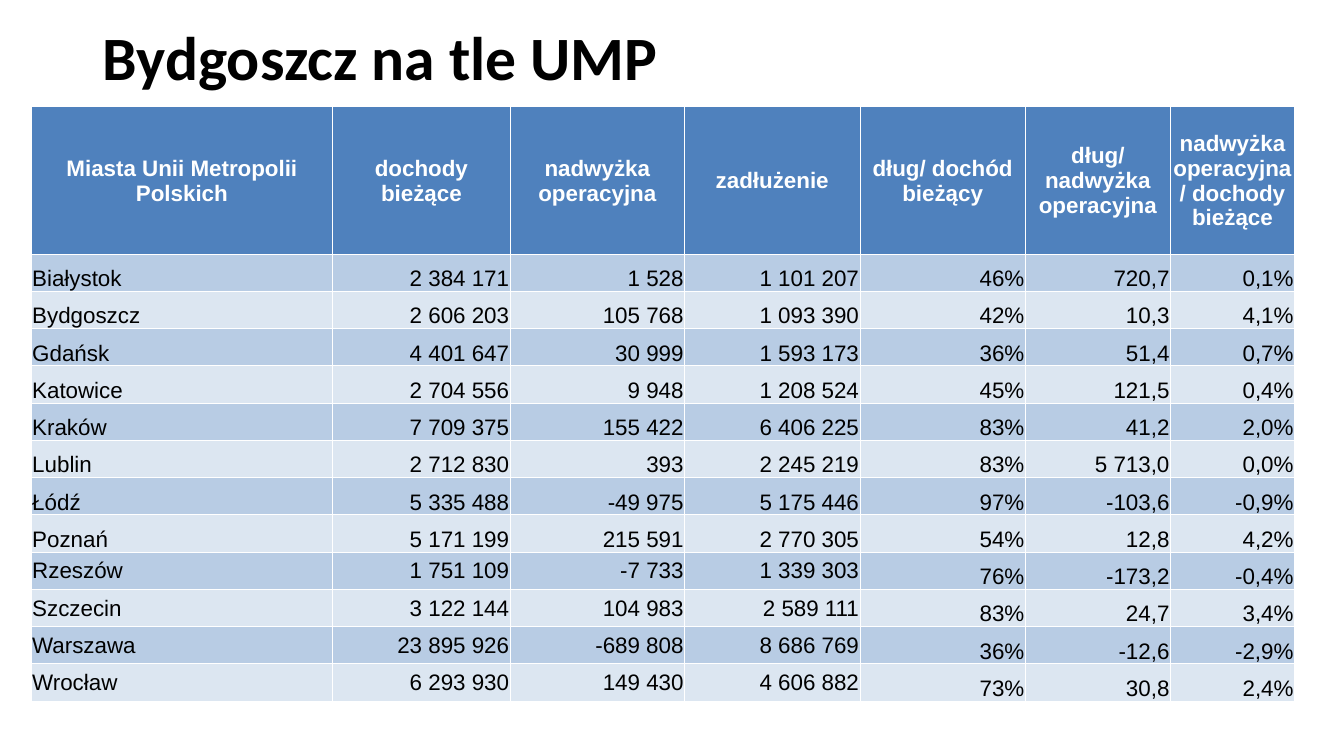
from dataclasses import dataclass

from lxml import etree
from pptx import Presentation
from pptx.dml.color import RGBColor
from pptx.enum.text import MSO_ANCHOR, PP_ALIGN
from pptx.oxml.ns import qn
from pptx.util import Inches, Pt

LEFT, CENTER, RIGHT = PP_ALIGN.LEFT, PP_ALIGN.CENTER, PP_ALIGN.RIGHT
MIDDLE, BOTTOM = MSO_ANCHOR.MIDDLE, MSO_ANCHOR.BOTTOM

TITLE = "Bydgoszcz na tle UMP"
HEADERS = [
    "Miasta Unii Metropolii Polskich",
    "dochody bieżące",
    "nadwyżka operacyjna",
    "zadłużenie",
    "dług/ dochód bieżący",
    "dług/ nadwyżka operacyjna",
    "nadwyżka operacyjna/ dochody bieżące",
]
CITIES = [
    ("Białystok", "2 384 171", "1 528", "1 101 207", "46%", "720,7", "0,1%"),
    ("Bydgoszcz", "2 606 203", "105 768", "1 093 390", "42%", "10,3", "4,1%"),
    ("Gdańsk", "4 401 647", "30 999", "1 593 173", "36%", "51,4", "0,7%"),
    ("Katowice", "2 704 556", "9 948", "1 208 524", "45%", "121,5", "0,4%"),
    ("Kraków", "7 709 375", "155 422", "6 406 225", "83%", "41,2", "2,0%"),
    ("Lublin", "2 712 830", "393", "2 245 219", "83%", "5 713,0", "0,0%"),
    ("Łódź", "5 335 488", "-49 975", "5 175 446", "97%", "-103,6", "-0,9%"),
    ("Poznań", "5 171 199", "215 591", "2 770 305", "54%", "12,8", "4,2%"),
    ("Rzeszów", "1 751 109", "-7 733", "1 339 303", "76%", "-173,2", "-0,4%"),
    ("Szczecin", "3 122 144", "104 983", "2 589 111", "83%", "24,7", "3,4%"),
    ("Warszawa", "23 895 926", "-689 808", "8 686 769", "36%", "-12,6", "-2,9%"),
    ("Wrocław", "6 293 930", "149 430", "4 606 882", "73%", "30,8", "2,4%"),
]
COLUMN_WIDTHS = [2.99, 1.76, 1.73, 1.74, 1.64, 1.44, 1.23]
HEADER_HEIGHT, CITY_HEIGHT = 1.46, 0.37
FIRST_CENTERED_ROW = 9  # from Rzeszów on, names and amounts sit mid-cell
AMOUNT_COLUMNS = 4


@dataclass(frozen=True)
class Theme:
    title_font: str = "Calibri"
    table_font: str = "Arial"
    title_size: int = 44
    table_size: int = 16
    border_width: float = 0.75
    dark: str = "000000"
    light: str = "FFFFFF"
    header_fill: str = "4F81BD"
    band_fills: tuple = ("B8CCE4", "DCE6F1")


THEME = Theme()


def style_font(font, name, size, color, bold):
    font.name = name
    font.size = Pt(size)
    font.bold = bold
    font.color.rgb = RGBColor.from_string(color)


def add_borders(cell, sides):
    """Draw the given sides, listed in schema order L, R, T, B."""
    properties = cell._tc.get_or_add_tcPr()
    for index, side in enumerate(sides):
        line = etree.Element(qn(f"a:ln{side}"), w=str(Pt(THEME.border_width)))
        fill = etree.SubElement(line, qn("a:solidFill"))
        etree.SubElement(fill, qn("a:srgbClr"), val=THEME.light)
        properties.insert(index, line)


def add_title(slide):
    title = slide.shapes.title
    title.left, title.top = Inches(0.92), Inches(0.15)
    title.width, title.height = Inches(11.5), Inches(0.9)
    text_frame = title.text_frame
    text_frame.text = TITLE
    text_frame.vertical_anchor = MIDDLE
    paragraph = text_frame.paragraphs[0]
    paragraph.alignment = LEFT
    paragraph.line_spacing = 0.9
    style_font(paragraph.runs[0].font, THEME.title_font, THEME.title_size,
               THEME.dark, True)


def fill_cell(cell, text, row, column):
    is_header = row == 0
    if is_header:
        fill, color, alignment = THEME.header_fill, THEME.light, CENTER
    else:
        fill, color = THEME.band_fills[(row - 1) % 2], THEME.dark
        alignment = LEFT if column == 0 else RIGHT
    is_centered = row >= FIRST_CENTERED_ROW and column < AMOUNT_COLUMNS
    cell.text = text
    cell.vertical_anchor = MIDDLE if is_header or is_centered else BOTTOM
    cell.margin_left = cell.margin_right = cell.margin_top = Inches(0.01)
    cell.margin_bottom = 0
    cell.fill.solid()
    cell.fill.fore_color.rgb = RGBColor.from_string(fill)
    paragraph = cell.text_frame.paragraphs[0]
    paragraph.alignment = alignment
    style_font(paragraph.runs[0].font, THEME.table_font, THEME.table_size,
               color, is_header)
    inner_sides = {
        "L": column > 0,
        "R": column < len(HEADERS) - 1,
        "T": row > 0,
        "B": row < len(CITIES),
    }
    add_borders(cell, [side for side, inner in inner_sides.items() if inner])


def add_city_table(slide):
    rows = [HEADERS, *CITIES]
    heights = [HEADER_HEIGHT] + [CITY_HEIGHT] * len(CITIES)
    table = slide.shapes.add_table(
        len(rows), len(HEADERS), Inches(0.31), Inches(1.06),
        Inches(sum(COLUMN_WIDTHS)), Inches(sum(heights))).table
    table.horz_banding = False
    for column, width in zip(table.columns, COLUMN_WIDTHS):
        column.width = Inches(width)
    for row, height in zip(table.rows, heights):
        row.height = Inches(height)
    for row_index, texts in enumerate(rows):
        for column_index, text in enumerate(texts):
            fill_cell(table.cell(row_index, column_index), text,
                      row_index, column_index)


def main():
    presentation = Presentation()
    presentation.slide_width = Inches(13.33)
    presentation.slide_height = Inches(7.5)
    slide = presentation.slides.add_slide(presentation.slide_layouts[5])
    add_title(slide)
    add_city_table(slide)
    presentation.save("out.pptx")


if __name__ == "__main__":
    main()
